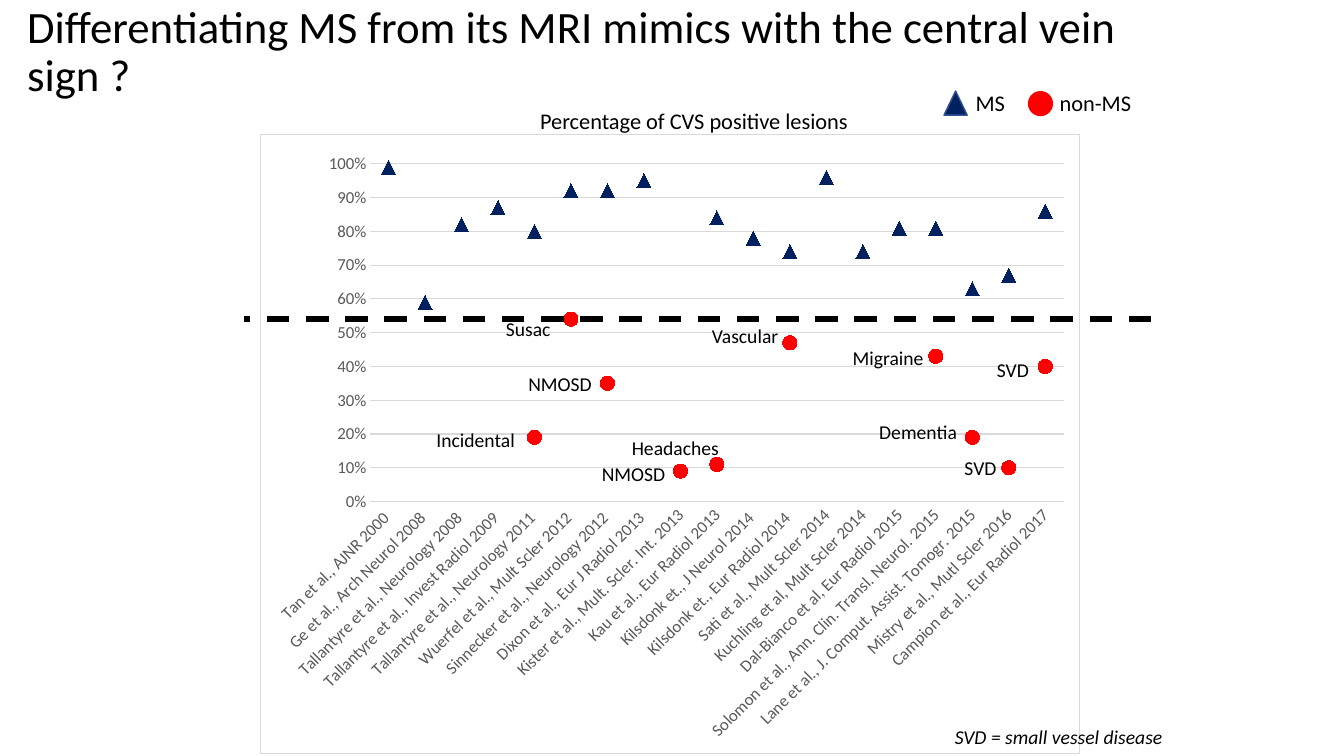
from lxml import etree
from pptx import Presentation
from pptx.chart.data import CategoryChartData
from pptx.dml.color import RGBColor
from pptx.enum.chart import XL_CHART_TYPE as ChartType, XL_MARKER_STYLE as Marker
from pptx.enum.chart import XL_TICK_LABEL_POSITION as LabelPosition, XL_TICK_MARK as Tick
from pptx.enum.dml import MSO_LINE_DASH_STYLE as Dash
from pptx.enum.shapes import MSO_CONNECTOR as Connector, MSO_SHAPE as Shape
from pptx.enum.text import MSO_ANCHOR as Anchor, MSO_AUTO_SIZE as AutoSize, PP_ALIGN as Align
from pptx.oxml import parse_xml
from pptx.oxml.ns import nsdecls, qn
from pptx.util import Pt

BLACK = RGBColor(0x00, 0x00, 0x00)
NAVY = RGBColor(0x00, 0x20, 0x60)
BLUE = RGBColor(0x32, 0x54, 0x91)
RED = RGBColor(0xFF, 0x00, 0x00)
GREY = RGBColor(0x59, 0x59, 0x59)
PALE = RGBColor(0xD9, 0xD9, 0xD9)

STUDIES = [
    ("Tan et al., AJNR 2000 ", 0.99, None),
    ("Ge et al., Arch Neurol 2008 ", 0.59, None),
    ("Tallantyre et al., Neurology 2008 ", 0.82, None),
    ("Tallantyre et al., Invest Radiol 2009 ", 0.87, None),
    ("Tallantyre et al., Neurology 2011 ", 0.80, 0.19),
    ("Wuerfel et al., Mult Scler 2012 ", 0.92, 0.54),
    ("Sinnecker et al., Neurology 2012 ", 0.92, 0.35),
    ("Dixon et al., Eur J Radiol 2013 ", 0.95, None),
    ("Kister et al., Mult. Scler. Int. 2013", None, 0.09),
    ("Kau et al., Eur Radiol 2013", 0.84, 0.11),
    ("Kilsdonk et., J Neurol 2014 ", 0.78, None),
    ("Kilsdonk et., Eur Radiol 2014 ", 0.74, 0.47),
    ("Sati et al., Mult Scler 2014", 0.96, None),
    ("Kuchling et al, Mult Scler 2014", 0.74, None),
    ("Dal-Bianco et al, Eur Radiol 2015", 0.81, None),
    ("Solomon et al., Ann. Clin. Transl. Neurol. 2015", 0.81, 0.43),
    ("Lane et al., J. Comput. Assist. Tomogr. 2015", 0.63, 0.19),
    ("Mistry et al., Mutl Scler 2016", 0.67, 0.10),
    ("Campion et al., Eur Radiol 2017", 0.86, 0.40),
]

DISEASES = [
    ("Incidental", 304.6, 302, 71.3),
    ("Susac", 354.2, 222.5, 46.8),
    ("NMOSD", 370.3, 262.1, 60.5),
    ("NMOSD", 422.8, 326.2, 60.5),
    ("Headaches", 444.2, 307.9, 77.8),
    ("Vascular", 501.4, 228.2, 62.6),
    ("Migraine", 601.9, 243.4, 65.5),
    ("Dementia", 620.9, 296.6, 70.6),
    ("SVD", 704.9, 252, 37.4),
    ("SVD", 681.8, 321.8, 37.4),
]


class Sheet:
    font = "Calibri"

    def __init__(self, page, shapes):
        self.page = page
        self.shapes = shapes

    def set_font(self, font, size, color=BLACK, italic=None):
        font.name, font.size, font.italic = self.font, Pt(size), italic
        font.color.rgb = color

    def title(self, words, left, top, width, height):
        box = self.page.shapes.title
        box.left, box.top, box.width, box.height = map(Pt, (left, top, width, height))
        frame = box.text_frame
        frame.text = words
        frame.word_wrap = True
        frame.auto_size = AutoSize.NONE
        frame.vertical_anchor = Anchor.MIDDLE
        para = frame.paragraphs[0]
        para.alignment = Align.LEFT
        para.line_spacing = 0.9
        self.set_font(para.font, 32)

    def label(self, words, left, top, width, size=14, italic=None):
        height = 24.5 if size == 14 else 26.6
        box = self.shapes.add_textbox(Pt(left), Pt(top), Pt(width), Pt(height))
        frame = box.text_frame
        frame.word_wrap = False
        frame.auto_size = AutoSize.SHAPE_TO_FIT_TEXT
        para = frame.paragraphs[0]
        para.text = words
        self.set_font(para.font, size, italic=italic)

    def symbol(self, kind, left, top, width, height, fill, outline=None):
        symbol = self.shapes.add_shape(kind, Pt(left), Pt(top), Pt(width), Pt(height))
        symbol.shadow.inherit = False
        symbol.fill.solid()
        symbol.fill.fore_color.rgb = fill
        if outline is None:
            symbol.line.fill.background()
        else:
            symbol.line.color.rgb = outline
            symbol.line.width = Pt(1)

    def dashed_line(self, start, end, height):
        line = self.shapes.add_connector(
            Connector.STRAIGHT, Pt(start), Pt(height), Pt(end), Pt(height))
        line.line.color.rgb = BLACK
        line.line.width = Pt(4)
        line.line.dash_style = Dash.DASH
        etree.SubElement(line._element.spPr, qn("a:effectLst"))

    def chart(self, left, top, width, height):
        data = CategoryChartData(number_format="0%")
        names, ms, others = zip(*STUDIES)
        data.categories = names
        data.add_series("Series 1", ms)
        data.add_series("Series 2", others)
        chart = self.shapes.add_chart(
            ChartType.LINE_MARKERS, Pt(left), Pt(top), Pt(width), Pt(height), data).chart
        chart.has_legend = chart.has_title = False
        self.set_font(chart.font, 10)
        chart.plots[0].vary_by_categories = False
        looks = ((Marker.TRIANGLE, NAVY), (Marker.CIRCLE, RED))
        for series, (style, color) in zip(chart.plots[0].series, looks):
            series.smooth = False
            series.format.line.fill.background()
            marker = series.marker
            marker.style, marker.size = style, 10
            marker.format.fill.solid()
            marker.format.fill.fore_color.rgb = color
            marker.format.line.fill.background()
        self.axes(chart)
        self.frame_chart(chart)

    def axes(self, chart):
        names, values = chart.category_axis, chart.value_axis
        for axis in (names, values):
            axis.major_tick_mark = axis.minor_tick_mark = Tick.NONE
            axis.tick_label_position = LabelPosition.NEXT_TO_AXIS
            self.set_font(axis.tick_labels.font, 12, GREY)
        names._element.find(qn("c:txPr")).find(qn("a:bodyPr")).set("rot", "-2700000")
        values.minimum_scale, values.maximum_scale, values.major_unit = 0, 1.05, 0.1
        values.tick_labels.number_format = "0%"
        values.tick_labels.number_format_is_linked = False
        values.format.line.fill.background()
        values.has_major_gridlines = True
        for line in (names.format.line, values.major_gridlines.format.line):
            line.color.rgb = PALE
            line.width = Pt(0.75)

    def frame_chart(self, chart):
        space = chart._chartSpace
        space.find(qn("c:chart")).addnext(parse_xml(
            f'<c:spPr {nsdecls("c", "a")}><a:solidFill><a:srgbClr val="FFFFFF"/></a:solidFill>'
            f'<a:ln w="{Pt(0.75)}"><a:solidFill><a:srgbClr val="{PALE}"/></a:solidFill></a:ln>'
            '</c:spPr>'))
        area = space.find(qn("c:chart")).find(qn("c:plotArea"))
        for layout in area.findall(qn("c:layout")):
            area.remove(layout)
        settings = [("layoutTarget", "inner"), ("xMode", "edge"), ("yMode", "edge"),
                    ("x", 0.134), ("y", 0.02), ("w", 0.847), ("h", 0.573)]
        inner = "".join(f'<c:{tag} val="{value}"/>' for tag, value in settings)
        area.insert(0, parse_xml(
            f'<c:layout {nsdecls("c")}><c:manualLayout>{inner}</c:manualLayout></c:layout>'))


def main():
    deck = Presentation()
    deck.slide_width, deck.slide_height = Pt(960), Pt(540)
    page = deck.slides.add_slide(deck.slide_layouts[5])
    sheet = Sheet(page, page.shapes)
    sheet.title("Differentiating MS from its MRI mimics with the central vein sign ?",
                12.2, -14.4, 864.7, 104.4)

    legend = Sheet(page, page.shapes.add_group_shape().shapes)
    legend.symbol(Shape.ISOSCELES_TRIANGLE, 674.3, 65, 16.6, 17.3, NAVY, BLUE)
    legend.symbol(Shape.OVAL, 734.2, 65, 18, 18, RED)
    legend.label("MS", 689.8, 60.3, 36, 16)
    legend.label("non-MS", 749.8, 60.3, 66.2, 16)

    sheet.chart(185.8, 95.8, 585.4, 442.8)
    sheet.dashed_line(822.2, 174.2, 228)
    for disease in DISEASES:
        sheet.label(*disease)
    sheet.label("SVD = small vessel disease", 674.9, 514.1, 164.9, italic=True)
    sheet.label("Percentage of CVS positive lesions", 378.7, 73, 241.2, 16)
    deck.save("out.pptx")


if __name__ == "__main__":
    main()
